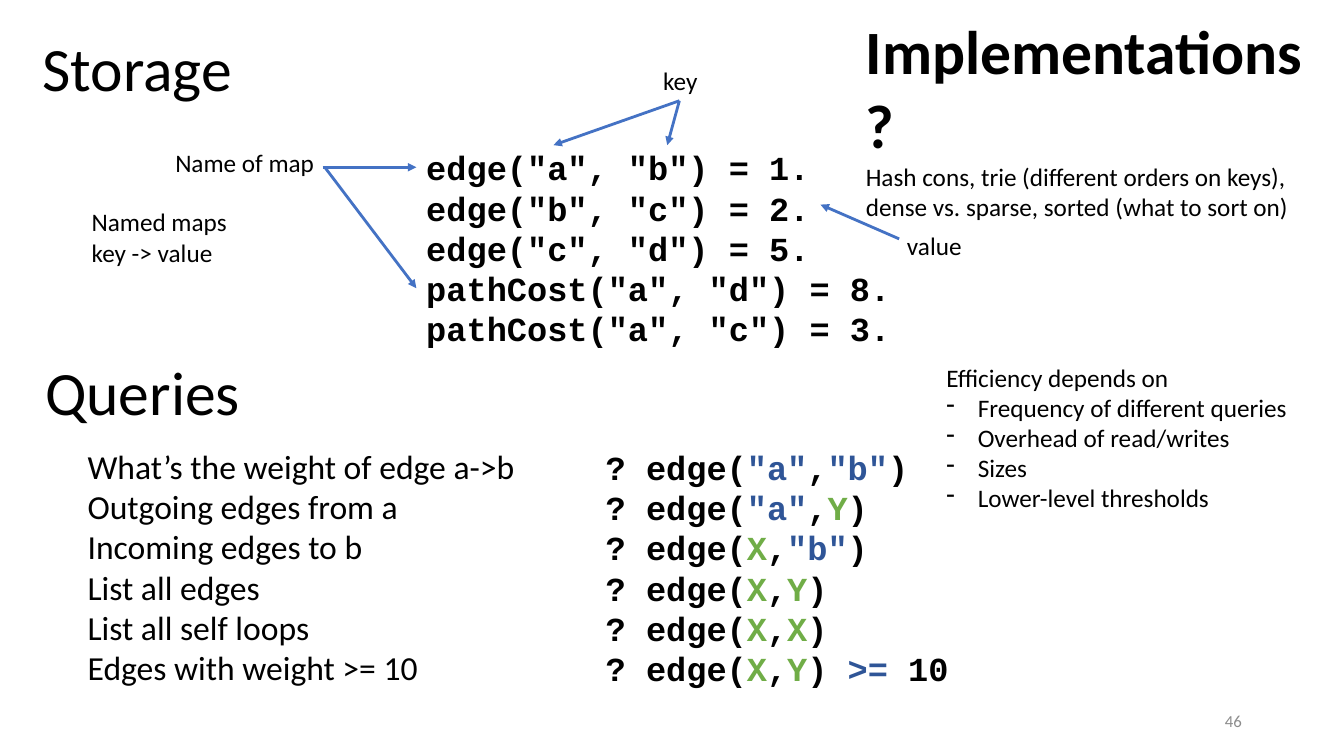
from dataclasses import dataclass
from typing import NamedTuple

from lxml.etree import SubElement
from pptx import Presentation
from pptx.dml.color import RGBColor
from pptx.enum.shapes import MSO_CONNECTOR as Connector
from pptx.enum.text import MSO_ANCHOR as Anchor, MSO_AUTO_SIZE as AutoSize, PP_ALIGN as Align
from pptx.oxml.ns import qn
from pptx.util import Inches, Pt

WIDTH, HEIGHT = Inches(13.33), Inches(7.5)
BLACK, GREY, ARROW_BLUE = "000000", "8C8C8C", "4472C4"
CONSTANT, VARIABLE = "2F5597", "70AD47"
TOKEN_COLOURS = {'"a"': CONSTANT, '"b"': CONSTANT, ">=": CONSTANT, "X": VARIABLE, "Y": VARIABLE}
HEADING, CODE, LABEL, NUMBER = 44, 24, 18, 12


class Area(NamedTuple):
    left: float
    top: float
    width: float
    height: float


class Point(NamedTuple):
    x: float
    y: float


class Arrow(NamedTuple):
    start: Point
    end: Point


@dataclass
class Line:
    spans: list[str]
    size: int = LABEL
    font: str = "Calibri"
    bold: bool = False
    colour: str = BLACK
    align: Align = Align.LEFT
    spacing: float = 1.0
    bullet: str = ""


@dataclass
class Block:
    area: Area
    lines: list[Line]
    wrap: bool = True
    anchor: Anchor = Anchor.TOP
    grow: bool = True


def across(percent: float) -> int:
    return round(WIDTH * percent / 100)


def down(percent: float) -> int:
    return round(HEIGHT * percent / 100)


def colour(code: str) -> RGBColor:
    return RGBColor.from_string(code)


def code(*spans: str) -> Line:
    return Line(list(spans), CODE, "Courier New", True)


def query(first: str, second: str, *rest: str) -> Line:
    return code("? edge(", first, ",", second, *(rest or (")",)))


def label(area: Area, *texts: str) -> Block:
    return Block(area, [Line([text]) for text in texts], wrap=False)


BLOCKS = [
    Block(Area(2.4, -0.13, 86.25, 19.33), [Line(["Storage"], HEADING, spacing=0.9)],
          anchor=Anchor.MIDDLE, grow=False),
    Block(Area(70.65, 92.67, 22.5, 5.33), [Line(["46"], NUMBER, colour=GREY, align=Align.RIGHT)],
          anchor=Anchor.MIDDLE, grow=False),
    Block(Area(30.98, 18.8, 38.03, 28.27), [
        code('edge("a", "b") = 1.'),
        code('edge("b", "c") = 2.'),
        code('edge("c", "d") = 5.'),
        code('pathCost("a", "d") = 8.'),
        code('pathCost("a", "c") = 3.'),
    ]),
    Block(Area(2.63, 46.13, 88.43, 11.2), [Line(["Queries"], HEADING)]),
    Block(Area(44.33, 58.4, 37.65, 33.6), [
        query('"a"', '"b"'),
        query('"a"', "Y"),
        query("X", '"b"'),
        query("X", "Y"),
        query("X", "X"),
        query("X", "Y", ") ", ">=", " 10"),
    ]),
    Block(Area(5.78, 58.27, 37.43, 33.6), [Line([question], CODE) for question in (
        "What’s the weight of edge a->b",
        "Outgoing edges from a",
        "Incoming edges to b",
        "List all edges",
        "List all self loops",
        "Edges with weight >= 10",
    )]),
    label(Area(12.3, 18.8, 12, 5.33), "Name of map"),
    label(Area(48.6, 8, 4.28, 5.33), "key"),
    label(Area(66.75, 29.87, 5.63, 5.33), "value"),
    label(Area(6.08, 26.67, 12.15, 9.47), "Named maps", "key -> value"),
    Block(Area(63.68, 1.07, 35.93, 19.33), [
        Line(["Implementations?"], HEADING, bold=True),
        Line(["Hash cons, trie (different orders on keys), "
              "dense vs. sparse, sorted (what to sort on)"]),
    ]),
    Block(Area(69.68, 47.2, 28.88, 21.6), [Line(["Efficiency depends on"])] + [
        Line([factor], bullet="-") for factor in (
            "Frequency of different queries",
            "Overhead of read/writes",
            "Sizes",
            "Lower-level thresholds",
        )]),
]

KEY = Point(50.55, 13.33)
ARROWS = [
    Arrow(Point(24, 22.13), Point(30.98, 22.13)),
    Arrow(KEY, Point(41.18, 19.2)),
    Arrow(KEY, Point(49.65, 19.2)),
    Arrow(Point(66.9, 31.6), Point(61.05, 27.07)),
    Arrow(Point(24.23, 22.27), Point(30.98, 38.13)),
]


def write_line(para, line: Line) -> None:
    para.alignment = line.align
    para.line_spacing = line.spacing
    para.font.name = line.font
    para.font.size = Pt(line.size)
    para.font.bold = line.bold
    para.font.color.rgb = colour(line.colour)
    for text in line.spans:
        span = para.add_run()
        span.text = text
        if text in TOKEN_COLOURS:
            span.font.color.rgb = colour(TOKEN_COLOURS[text])
    if line.bullet:
        properties = para._p.get_or_add_pPr()
        indent = across(2.34)
        properties.set("marL", str(indent))
        properties.set("indent", str(-indent))
        mark = properties.makeelement(qn("a:buChar"), {"char": line.bullet})
        properties.find(qn("a:defRPr")).addprevious(mark)


def draw_block(page, block: Block) -> None:
    area = block.area
    box = page.shapes.add_textbox(across(area.left), down(area.top),
                                  across(area.width), down(area.height))
    frame = box.text_frame
    frame.word_wrap = block.wrap
    frame.vertical_anchor = block.anchor
    frame.auto_size = AutoSize.SHAPE_TO_FIT_TEXT if block.grow else AutoSize.NONE
    for index, line in enumerate(block.lines):
        write_line(frame.add_paragraph() if index else frame.paragraphs[0], line)


def draw_arrow(page, arrow: Arrow) -> None:
    start, end = arrow
    connector = page.shapes.add_connector(Connector.STRAIGHT, across(start.x), down(start.y),
                                          across(end.x), down(end.y))
    connector.line.color.rgb = colour(ARROW_BLUE)
    connector.line.width = Pt(2)
    SubElement(connector.line._get_or_add_ln(), qn("a:tailEnd"), type="triangle")
    SubElement(connector._element.spPr, qn("a:effectLst"))


def main() -> None:
    deck = Presentation()
    deck.slide_width, deck.slide_height = WIDTH, HEIGHT
    page = deck.slides.add_slide(deck.slide_layouts[6])
    for block in BLOCKS:
        draw_block(page, block)
    for arrow in ARROWS:
        draw_arrow(page, arrow)
    deck.save("out.pptx")


if __name__ == "__main__":
    main()
